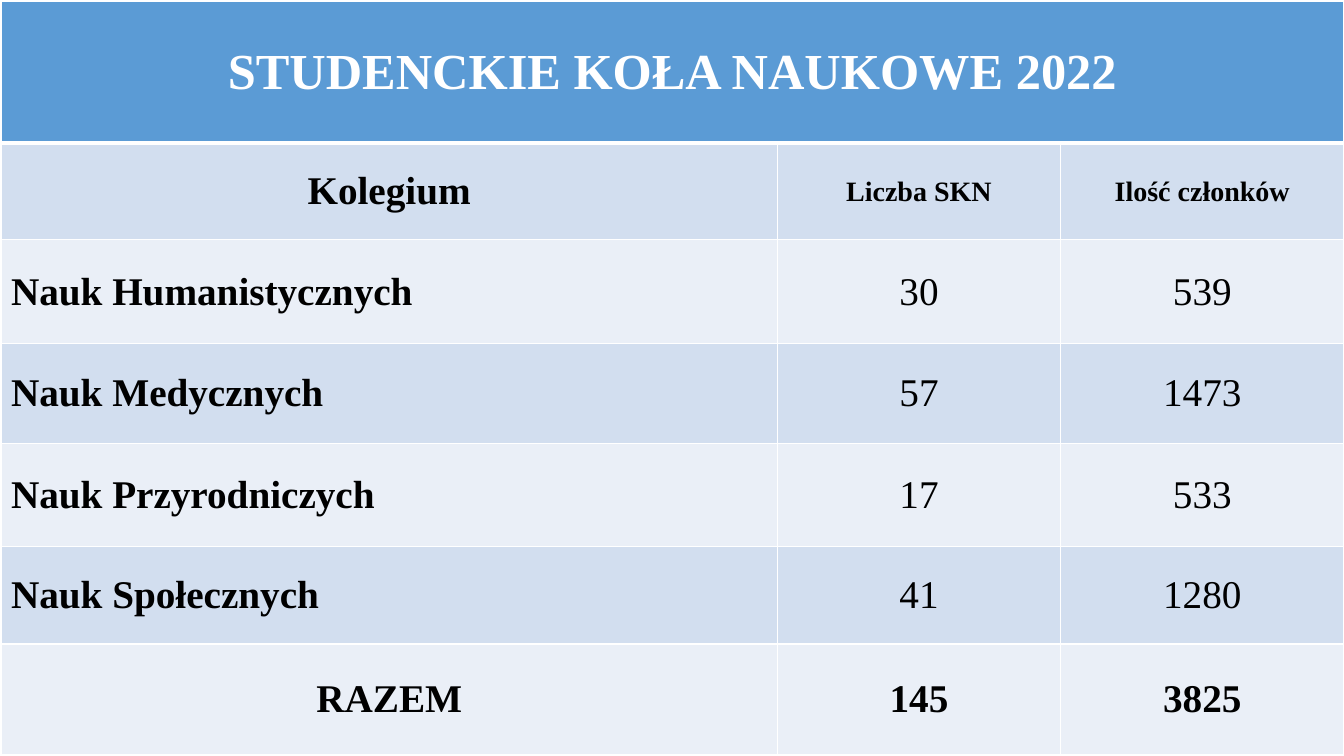
from lxml.etree import SubElement
from pptx import Presentation
from pptx.dml.color import RGBColor as Rgb
from pptx.enum.text import MSO_ANCHOR as Anchor, PP_ALIGN as Align
from pptx.oxml.ns import qn
from pptx.util import Inches, Pt

COLORS = {
    "title": "5B9BD5",
    "dark_band": "D2DEEF",
    "light_band": "EAEFF7",
    "rule": "FFFFFF",
    "title_text": "FFFFFF",
    "text": "000000",
}
FONT = "Times New Roman"
WIDTH, HEIGHT, MARGIN = 13.33, 7.5, 0.01

# Grid of the table, in inches
COLUMNS = [7.7, 2.81, 2.81]
ROWS = [1.41, 0.96, 1.03, 0.99, 1.02, 0.97, 1.1]

TITLE = "STUDENCKIE KOŁA NAUKOWE 2022"
HEADINGS = ["Kolegium", "Liczba SKN", "Ilość członków"]
COLLEGES = [
    ["Nauk Humanistycznych", "30", "539"],
    ["Nauk Medycznych", "57", "1473"],
    ["Nauk Przyrodniczych", "17", "533"],
    ["Nauk Społecznych", "41", "1280"],
]
TOTALS = ["RAZEM", "145", "3825"]


def rule_cell(cell, widths):
    """Draw the four edges of a cell; widths are in points."""
    properties = cell._tc.get_or_add_tcPr()
    for side, width in widths.items():
        edge = SubElement(properties, qn(f"a:ln{side}"), w=str(Pt(width)))
        fill = SubElement(edge, qn("a:solidFill"))
        SubElement(fill, qn("a:srgbClr"), val=COLORS["rule"])


def fill_cell(cell, text, band, size=28, bold=True, align=Align.CENTER,
              color="text", top=1, bottom=1):
    rule_cell(cell, {"L": 1, "R": 1, "T": top, "B": bottom})
    cell.fill.solid()
    cell.fill.fore_color.rgb = Rgb.from_string(COLORS[band])
    cell.vertical_anchor = Anchor.MIDDLE
    paragraph = cell.text_frame.paragraphs[0]
    paragraph.alignment = align
    run = paragraph.add_run()
    run.text = text
    for name, value in {"name": FONT, "size": Pt(size), "bold": bold}.items():
        setattr(run.font, name, value)
    run.font.color.rgb = Rgb.from_string(COLORS[color])


def add_grid(slide):
    grid = slide.shapes.add_table(
        len(ROWS), len(COLUMNS), Inches(MARGIN), Inches(MARGIN),
        Inches(sum(COLUMNS)), Inches(sum(ROWS))).table
    for column, width in zip(grid.columns, COLUMNS):
        column.width = Inches(width)
    for row, height in zip(grid.rows, ROWS):
        row.height = Inches(height)
    return grid


def main():
    deck = Presentation()
    deck.slide_width, deck.slide_height = Inches(WIDTH), Inches(HEIGHT)
    grid = add_grid(deck.slides.add_slide(deck.slide_layouts[6]))

    # Title across all columns
    title = grid.cell(0, 0)
    title.merge(grid.cell(0, len(COLUMNS) - 1))
    fill_cell(title, TITLE, "title", size=36, color="title_text", bottom=3)

    # Headings
    for col, heading in enumerate(HEADINGS):
        fill_cell(grid.cell(1, col), heading, "dark_band",
                  size=20 if col else 28, top=3)

    # Colleges: bold names on the left, plain counts in the centre
    for row, college in enumerate(COLLEGES, start=2):
        band = "dark_band" if row % 2 else "light_band"
        for col, text in enumerate(college):
            fill_cell(grid.cell(row, col), text, band, bold=col == 0,
                      align=Align.CENTER if col else Align.LEFT)

    # Totals
    for col, total in enumerate(TOTALS):
        fill_cell(grid.cell(len(ROWS) - 1, col), total, "light_band")

    deck.save("out.pptx")


if __name__ == "__main__":
    main()
